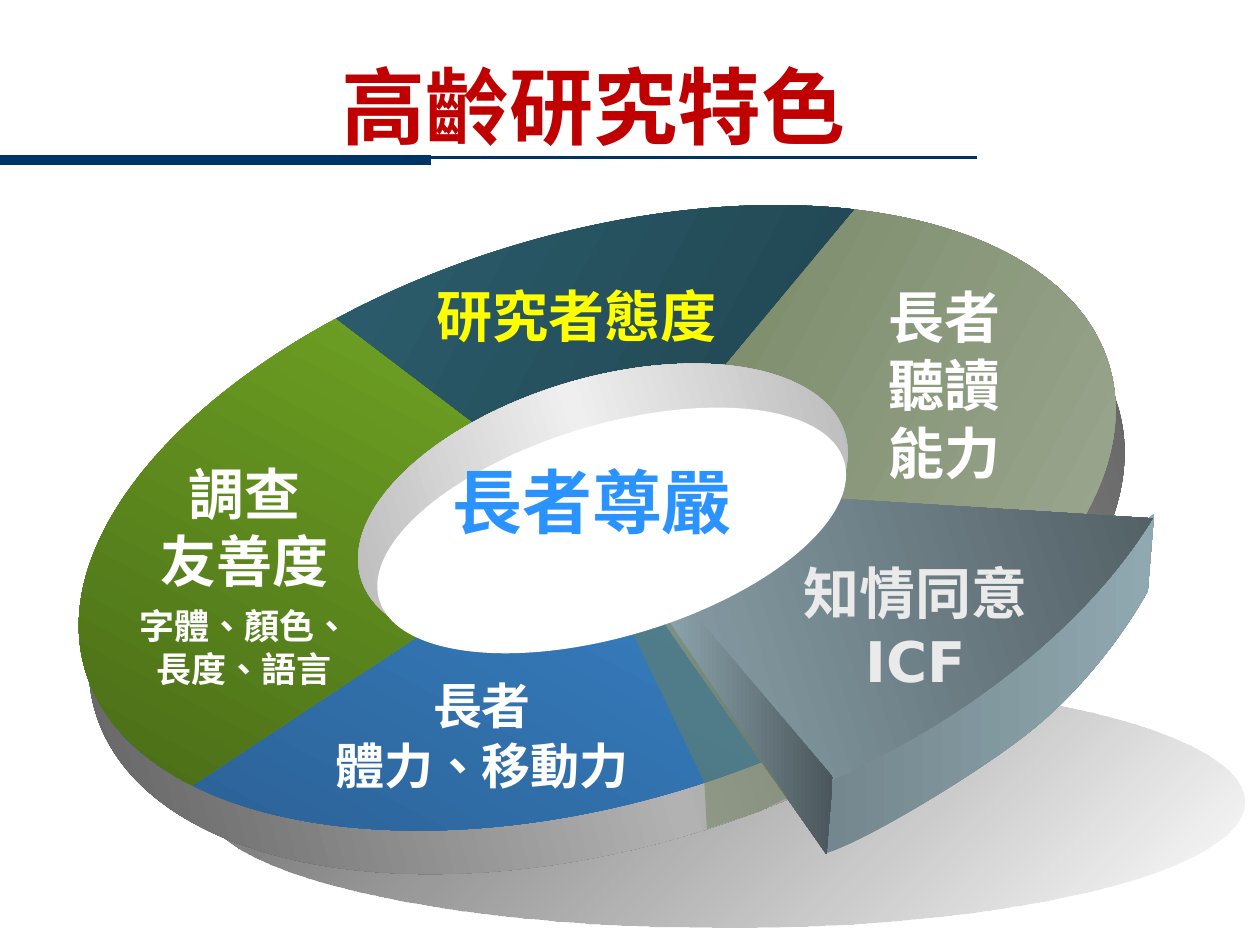
from dataclasses import dataclass
from math import ceil, cos, floor, radians, sin, tan
from typing import NamedTuple

from lxml import etree
from pptx import Presentation
from pptx.dml.color import RGBColor
from pptx.enum.lang import MSO_LANGUAGE_ID
from pptx.enum.shapes import MSO_CONNECTOR, MSO_SHAPE
from pptx.enum.text import MSO_ANCHOR, MSO_AUTO_SIZE, PP_ALIGN
from pptx.oxml.ns import qn
from pptx.util import Emu, Inches, Pt

OVAL = MSO_SHAPE.OVAL
STRAIGHT = MSO_CONNECTOR.STRAIGHT
CENTER, LEFT = PP_ALIGN.CENTER, PP_ALIGN.LEFT
MIDDLE = MSO_ANCHOR.MIDDLE
GROW, FIXED = MSO_AUTO_SIZE.SHAPE_TO_FIT_TEXT, MSO_AUTO_SIZE.NONE
ZH_TW = MSO_LANGUAGE_ID.TRADITIONAL_CHINESE

COLS, ROWS = 10, 7.5
CELL = Inches(1)
TILT = -16.6
HUB = (4.74, 4.11)
RADII = (4.24, 2.26)


@dataclass(frozen=True)
class Theme:
    rule: str = "003366"
    title: str = "C00000"
    core: str = "2B93FF"
    white: str = "FFFFFF"
    accent: str = "FFFF00"
    pale: str = "EAEAEA"
    latin: str = "Lato"
    jp: str = "Noto Sans CJK JP"
    sc: str = "Noto Sans CJK SC"
    sans: str = "DejaVu Sans"
    title_size: int = 48
    core_size: int = 40
    label_size: int = 32
    minor_size: int = 28
    note_size: int = 20
    leading: float = 1.21


T = Theme()


class Stop(NamedTuple):
    pos: int
    color: str
    alpha: int = 100


class Paint(NamedTuple):
    stops: tuple[Stop, ...]
    angle: int = 45


class Disc(NamedTuple):
    box: tuple[float, float, float, float]
    paint: Paint
    tilt: float = TILT


class Sector(NamedTuple):
    start: float
    end: float
    paint: Paint


class Line(NamedTuple):
    text: str
    size: int = T.label_size
    font: str = T.jp
    after: int = 0


class Label(NamedTuple):
    box: tuple[float, float, float, float]
    lines: tuple[Line, ...]
    color: str = T.white
    wrap: bool = True
    align: PP_ALIGN = CENTER


def blend(first: str, last: str, angle: int = 45) -> Paint:
    return Paint((Stop(0, first), Stop(100, last)), angle)


def sheen(edge: str, mid: str) -> Paint:
    return Paint((Stop(0, edge), Stop(50, mid), Stop(100, edge)), 0)


def flat(color: str, alpha: int = 100) -> Paint:
    return Paint((Stop(0, color, alpha),))


SLATE = blend("90A8B0", "4A565B", 0)

DISCS = (
    Disc((1.6, 5.36, 8.28, 2), Paint((Stop(0, "292929", 70), Stop(100, "1D1D1D", 0)))),
    Disc((0.58, 2.16, 8.47, 4.56), sheen("555555", "B2B2B2")),
    Disc((0.6, 1.91, 8.28, 4.42), blend("2791BB", "000000")),
)
SECTORS = (
    Sector(-52.4, 32.3, blend("6E815B", "A0AA94")),
    Sector(80.2, 172.8, blend("3984C9", "28598A", 135)),
    Sector(240.8, 308.7, blend("2E6272", "1D3E48")),
    Sector(150.4, 248.7, blend("77AE26", "466816", 135)),
)
INNER_WALL = Disc((2.78, 3, 4.01, 2.03), sheen("B2B2B2", "EFEFEF"))
HOLE = Disc((2.93, 3.37, 3.85, 1.68), flat(T.white))

LABELS = (
    Label((6.68, 2.19, 1.64, 1.72), (Line("長者"), Line("聽讀"), Line("能力"))),
    Label((3.35, 2.18, 2.45, 0.64), (Line("研究者態度"),), T.accent, False),
    Label((0.98, 3.59, 1.92, 1.93), (Line("調查"), Line("友善度", after=6),
                                     Line("字體、顏色、長度、語言", T.note_size))),
    Label((3.49, 3.59, 3.01, 0.77), (Line("長者尊嚴", T.core_size, T.latin),), T.core, True, LEFT),
    Label((6.27, 4.38, 2, 1.18), (Line("知情同意", font=T.sc), Line("ICF", font=T.sans)),
          T.pale, False),
    Label((2.18, 5.31, 3.29, 1.51), (Line("長者", T.minor_size), Line("體力、移動力", T.minor_size))),
)


def grid(*cells: float) -> list[Emu]:
    return [Emu(round(c * CELL)) for c in cells]


def apply_paint(s, paint: Paint) -> None:
    s.shadow.inherit = False
    s.line.fill.background()
    s.fill.solid()
    solid = s._element.spPr.find(qn("a:solidFill"))
    fill = etree.Element(qn("a:gradFill"), rotWithShape="1")
    stops = etree.SubElement(fill, qn("a:gsLst"))
    for stop in paint.stops:
        holder = etree.SubElement(stops, qn("a:gs"), pos=str(stop.pos * 1000))
        color = etree.SubElement(holder, qn("a:srgbClr"), val=stop.color)
        if stop.alpha < 100:
            etree.SubElement(color, qn("a:alpha"), val=str(stop.alpha * 1000))
    if len(paint.stops) == 1:
        fill = etree.Element(qn("a:solidFill"))
        fill.append(color)
    else:
        etree.SubElement(fill, qn("a:lin"), ang=str(paint.angle * 60000), scaled="1")
    solid.getparent().replace(solid, fill)


def add_disc(shapes, disc: Disc) -> None:
    s = shapes.add_shape(OVAL, *grid(*disc.box))
    s.rotation = disc.tilt
    apply_paint(s, disc.paint)


def add_outline(shapes, start, steps, paint: Paint, tilt: float = 0):
    fb = shapes.build_freeform(*grid(*start))
    fb.add_line_segments([grid(*step[-1]) for step in steps], close=True)
    s = fb.convert_to_shape()
    for step, seg in zip(steps, list(s._element.iter(qn("a:lnTo")))):
        if len(step) == 3:
            curve = etree.Element(qn("a:cubicBezTo"))
            for x, y in (grid(*p) for p in step):
                etree.SubElement(curve, qn("a:pt"), x=str(x - s.left), y=str(y - s.top))
            seg.getparent().replace(seg, curve)
    s.rotation = tilt
    apply_paint(s, paint)
    return s


def on_ring(angle: float, slope: float = 0) -> tuple[float, float]:
    c, k = cos(angle), sin(angle)
    return HUB[0] + RADII[0] * (c - slope * k), HUB[1] + RADII[1] * (k + slope * c)


def add_sector(shapes, sector: Sector) -> None:
    quarters = range(ceil(sector.start / 90), floor(sector.end / 90) + 1)
    cuts = [radians(a) for a in (sector.start, *(90 * q for q in quarters), sector.end)]
    steps = [(on_ring(cuts[0]),)]
    for a, b in zip(cuts, cuts[1:]):
        pull = 4 / 3 * tan((b - a) / 4)
        steps.append((on_ring(a, pull), on_ring(b, -pull), on_ring(b)))
    s = add_outline(shapes, HUB, steps, sector.paint, TILT)
    hx, hy = grid(*HUB)
    dx, dy = s.left + s.width / 2 - hx, s.top + s.height / 2 - hy
    c, k = cos(radians(TILT)), sin(radians(TILT))
    s.left = Emu(round(hx + dx * c - dy * k - s.width / 2))
    s.top = Emu(round(hy + dx * k + dy * c - s.height / 2))


def add_run(p, line: Line, color: str) -> None:
    r = p.add_run()
    r.text = line.text
    f = r.font
    f.name, f.size, f.bold, f.language_id = line.font, Pt(line.size), True, ZH_TW
    f.color.rgb = RGBColor.from_string(color)
    ea = etree.Element(qn("a:ea"), typeface=line.font)
    r._r.rPr.find(qn("a:latin")).addnext(ea)


def add_label(shapes, label: Label) -> None:
    tf = shapes.add_textbox(*grid(*label.box)).text_frame
    tf.word_wrap, tf.auto_size = label.wrap, GROW
    for i, line in enumerate(label.lines):
        p = tf.paragraphs[0] if i == 0 else tf.add_paragraph()
        p.alignment, p.space_after = label.align, Pt(line.after)
        if line.font != T.latin:
            p.line_spacing = Pt(round(line.size * T.leading, 1))
        add_run(p, line, label.color)


def add_rule(shapes, x: float, y: float, width: float) -> None:
    s = shapes.add_connector(STRAIGHT, *grid(0, y, x, y))
    s.line.color.rgb = RGBColor.from_string(T.rule)
    s.line.width = Pt(width)
    etree.SubElement(s._element.spPr, qn("a:effectLst"))


def main() -> None:
    prs = Presentation()
    prs.slide_width, prs.slide_height = grid(COLS, ROWS)
    shapes = prs.slides.add_slide(prs.slide_layouts[5]).shapes
    add_rule(shapes, 7.75, 1.25, 1.5)
    add_rule(shapes, 3.42, 1.27, 6)

    title = shapes.title
    title.left, title.top, title.width, title.height = grid(0.5, 0.52, 8.42, 0.62)
    tf = title.text_frame
    tf.vertical_anchor, tf.auto_size = MIDDLE, FIXED
    tf.paragraphs[0].alignment = CENTER
    add_run(tf.paragraphs[0], Line("高齡研究特色", T.title_size, T.latin), T.title)

    shadow, *ring = DISCS
    add_disc(shapes, shadow._replace(tilt=0))
    for disc in ring:
        add_disc(shapes, disc)
    for sector in SECTORS:
        add_sector(shapes, sector)
    add_disc(shapes, INNER_WALL)

    rim = [((9.16, 4.08),), ((9.11, 4.69),), ((8.95, 4.98), (8.64, 5.42), (8.22, 5.77)),
           ((7.8, 6.12), (6.84, 6.69), (6.56, 6.77)), ((6.52, 6.57), (6.57, 6.21), (6.57, 6.21))]
    wedge = [((9.19, 4.74),), ((8.45, 5.38), (7.28, 5.84), (5.97, 5.96))]
    side = [((6.56, 6.78),), ((5.24, 4.9),), ((5.45, 4.8),)]
    gap = [((5.59, 6.21),), ((5.61, 6.58),), ((6.03, 6.44),), ((6.25, 6.33),), ((5.29, 4.9),)]
    add_outline(shapes, (6.57, 6.21), rim, blend("74878E", "90A8B0", 0))
    add_outline(shapes, (5.13, 3.16), wedge, SLATE, -17.7)
    add_outline(shapes, (6.61, 6.17), side, SLATE)
    add_outline(shapes, (5, 4.98), gap, flat("6E815B", 49))
    add_disc(shapes, HOLE)

    for label in LABELS:
        add_label(shapes, label)
    prs.save("out.pptx")


if __name__ == "__main__":
    main()
